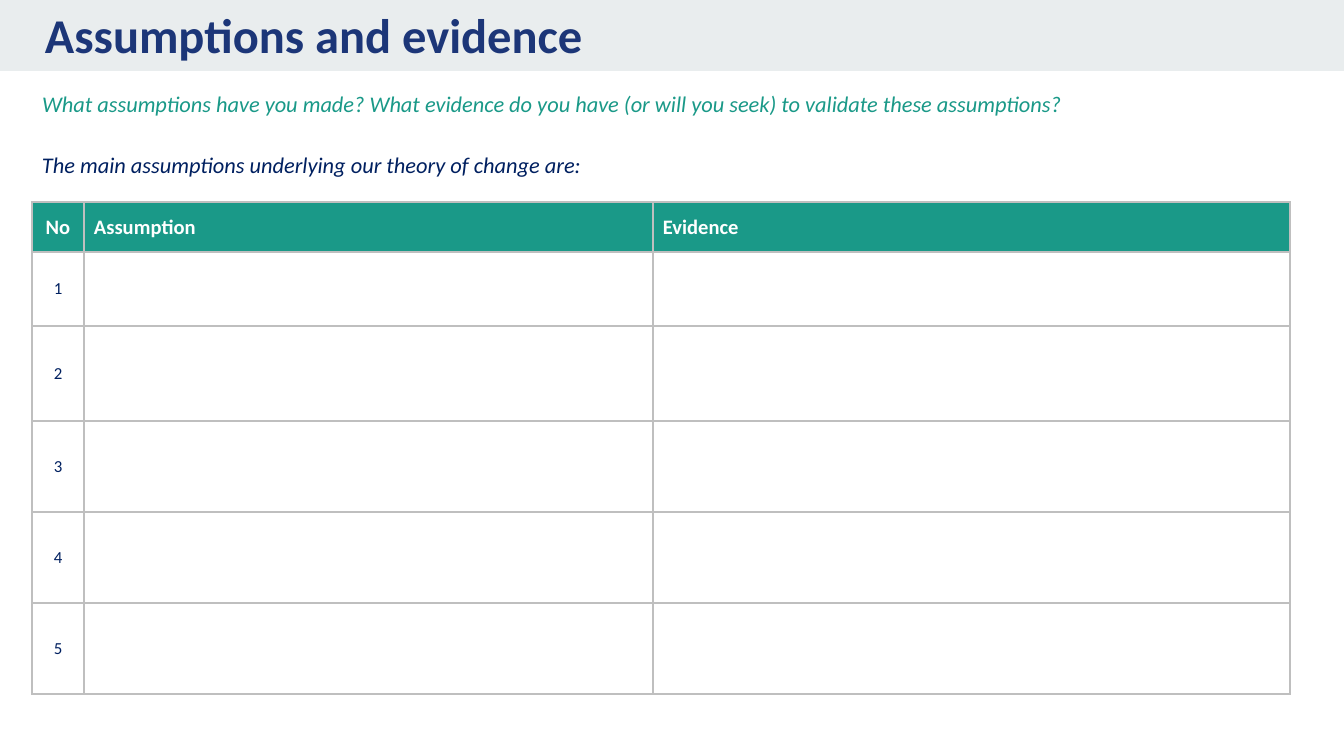
from lxml import etree
from pptx import Presentation
from pptx.dml.color import RGBColor
from pptx.enum.shapes import MSO_SHAPE as SHAPE
from pptx.enum.text import MSO_ANCHOR as ANCHOR, PP_ALIGN as ALIGN
from pptx.oxml.ns import qn
from pptx.util import Emu, Pt

NAVY = RGBColor(0x00, 0x20, 0x60)
BLUE = RGBColor(0x1C, 0x36, 0x78)
TEAL = RGBColor(0x1A, 0x99, 0x88)
MIST = RGBColor(0xE9, 0xED, 0xEE)
GREY = RGBColor(0xBF, 0xBF, 0xBF)
WHITE = RGBColor(0xFF, 0xFF, 0xFF)


def px(n):
    return Emu(round(n * 914400 / 134.4))


class Deck:
    font = "Calibri"

    def __init__(self, width, height):
        self.prs = Presentation()
        self.prs.slide_width, self.prs.slide_height = px(width), px(height)
        self.s = self.prs.slides.add_slide(self.prs.slide_layouts[6])

    def add_words(self, tf, text, align=ALIGN.LEFT, color=NAVY, **style):
        p = tf.paragraphs[0]
        p.alignment = align
        r = p.add_run()
        r.text = text
        r.font.color.rgb = color
        for name, value in {"name": self.font, **style}.items():
            setattr(r.font, name, value)

    def inset(self, target, pad_x, pad_y, anchor):
        values = {"margin_left": px(pad_x), "margin_right": px(pad_x),
                  "margin_top": px(pad_y), "margin_bottom": px(pad_y),
                  "vertical_anchor": anchor}
        for name, value in values.items():
            setattr(target, name, value)

    def rect(self, x, y, w, h, fill):
        sp = self.s.shapes.add_shape(SHAPE.RECTANGLE, px(x), px(y), px(w), px(h))
        sp.shadow.inherit = False
        sp.fill.solid()
        sp.fill.fore_color.rgb = fill
        sp.line.fill.background()
        return sp

    def text(self, x, y, w, h, text, pad_x, pad_y, **style):
        tf = self.s.shapes.add_textbox(px(x), px(y), px(w), px(h)).text_frame
        tf.word_wrap = True
        self.inset(tf, pad_x, pad_y, ANCHOR.TOP)
        self.add_words(tf, text, **style)

    def borders(self, cell):
        pr = cell._tc.get_or_add_tcPr()
        for i, side in enumerate(("lnL", "lnR", "lnT", "lnB")):
            ln = etree.Element(qn(f"a:{side}"), w=str(Pt(1)))
            fill = etree.SubElement(ln, qn("a:solidFill"))
            etree.SubElement(fill, qn("a:srgbClr"), val=str(GREY))
            pr.insert(i, ln)

    def table(self, x, y, widths, heights, rows):
        tbl = self.s.shapes.add_table(len(heights), len(widths), px(x), px(y),
                                      px(sum(widths)), px(sum(heights))).table
        tbl.first_row = tbl.horz_banding = False
        for col, w in zip(tbl.columns, widths):
            col.width = px(w)
        for i, (row, h) in enumerate(zip(tbl.rows, heights)):
            row.height = px(h)
            for j, cell in enumerate(row.cells):
                self.cell(cell, rows[i][j], header=i == 0, centred=j == 0)

    def cell(self, cell, text, header, centred):
        self.inset(cell, 10, 5, ANCHOR.MIDDLE)
        if header:
            cell.fill.solid()
            cell.fill.fore_color.rgb = TEAL
        else:
            cell.fill.background()
        self.borders(cell)
        if text:
            self.add_words(cell.text_frame, text,
                           ALIGN.CENTER if centred else ALIGN.LEFT,
                           WHITE if header else NAVY,
                           size=Pt(11 if header else 9), bold=header)


def main():
    deck = Deck(1344, 756)
    left = 32

    # Title band
    deck.rect(0, 0, 1344, 71, MIST)
    deck.text(left, -8, 1130, 79, "Assumptions and evidence", 13, 13,
              color=BLUE, size=Pt(26), bold=True)

    # Assumptions table
    rows = [("No", "Assumption", "Evidence")] + [(str(n), "", "") for n in range(1, 6)]
    deck.table(left, 202, (52, 569, 637), (50, 74, 95, 91, 91, 91), rows)

    # Lead-in to the table
    lead = deck.rect(left, 143, 761, 44, WHITE).text_frame
    lead.word_wrap = True
    deck.inset(lead, 10, 10, ANCHOR.MIDDLE)
    deck.add_words(lead, "The main assumptions underlying our theory of change are:",
                   size=Pt(12), italic=True)

    # Guiding question
    deck.text(left, 85, 1071, 44,
              "What assumptions have you made? What evidence do you have "
              "(or will you seek) to validate these assumptions?", 10, 5,
              color=TEAL, size=Pt(12), italic=True)

    deck.prs.save("out.pptx")


if __name__ == "__main__":
    main()
